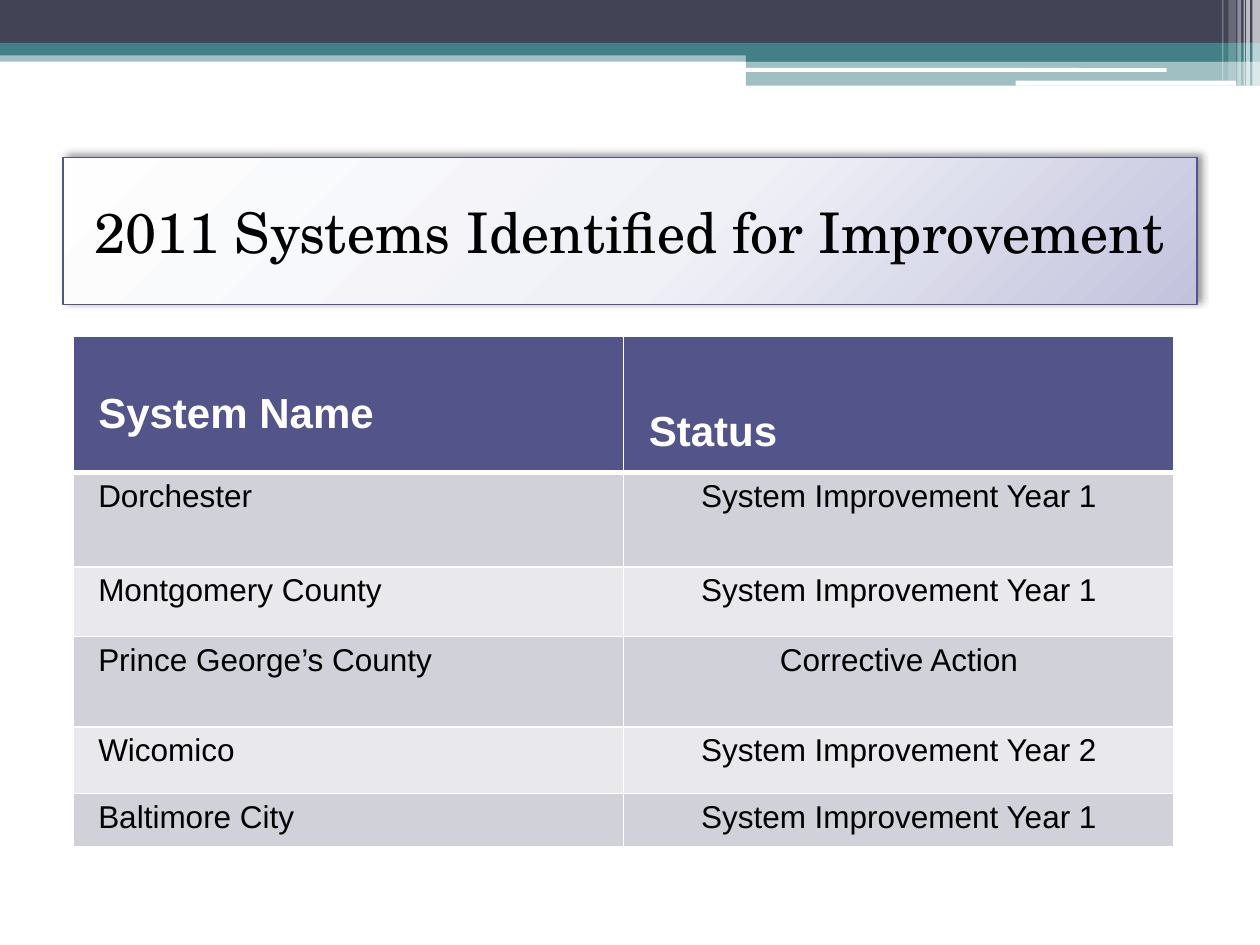
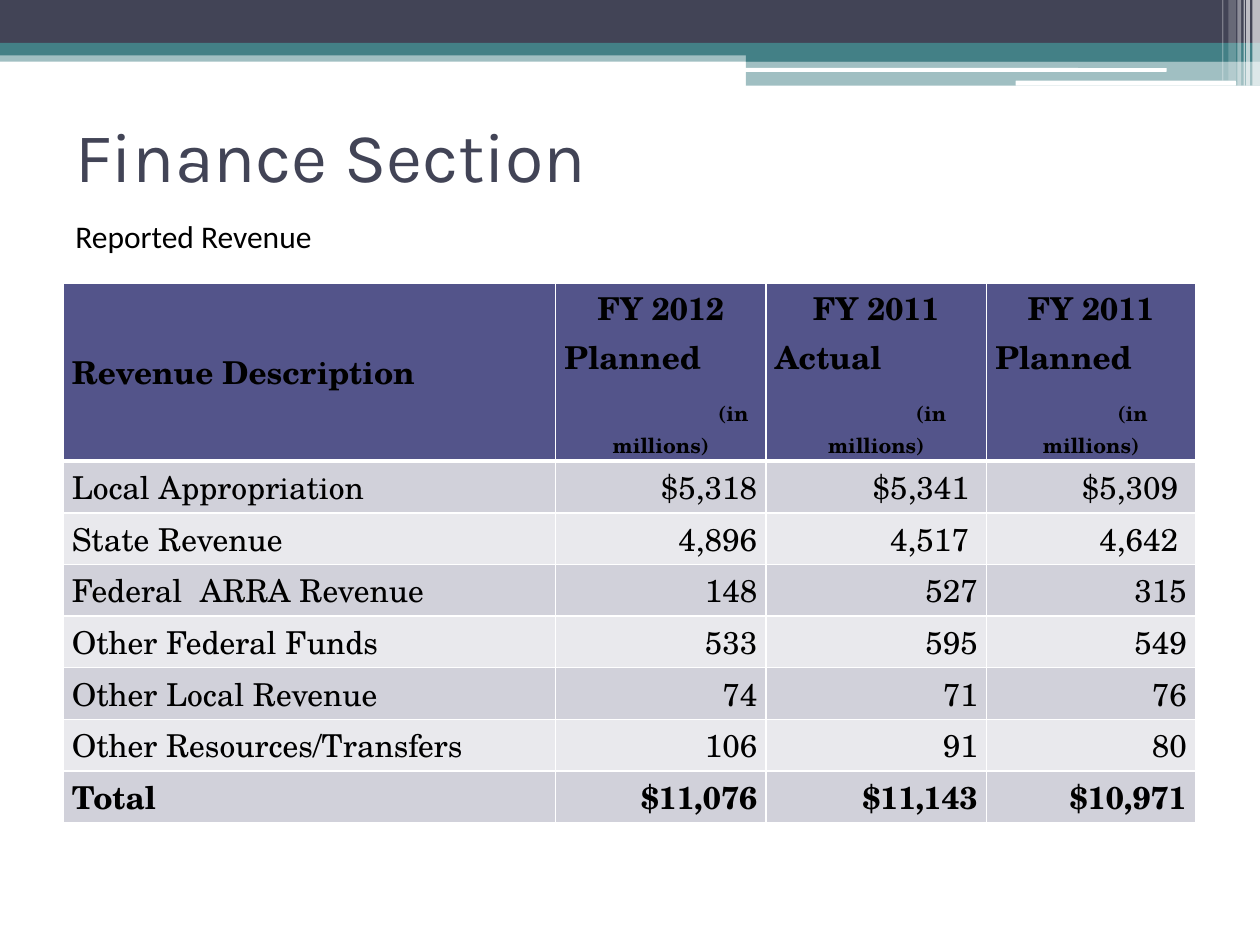
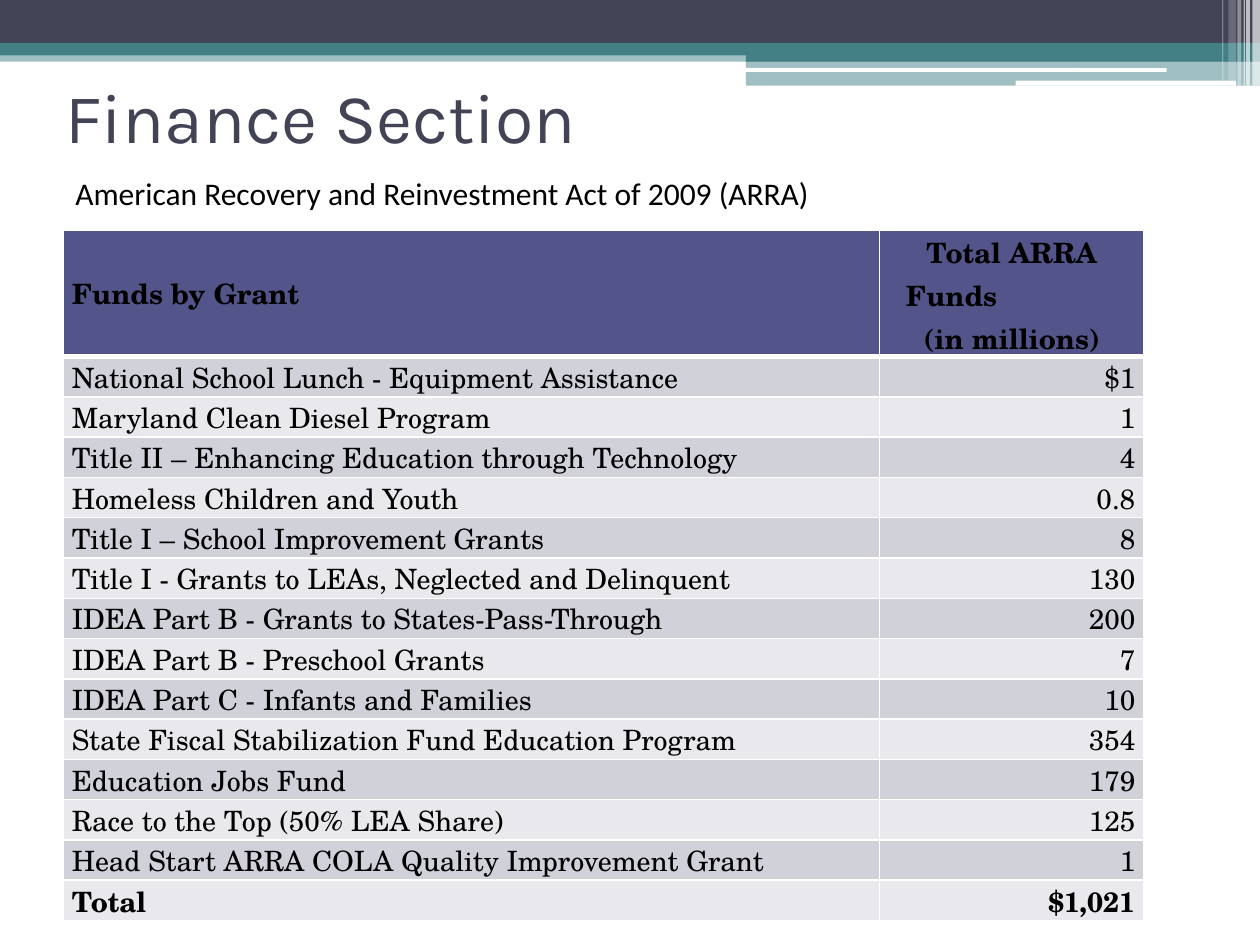
"""Build three slides on school system status and finance."""
from dataclasses import dataclass
from typing import NamedTuple

from lxml import etree
from pptx import Presentation
from pptx.dml.color import RGBColor
from pptx.enum.shapes import MSO_SHAPE
from pptx.enum.text import MSO_ANCHOR, PP_ALIGN
from pptx.oxml import parse_xml
from pptx.oxml.ns import nsdecls, qn
from pptx.util import Inches, Pt

RECT, ROUND = MSO_SHAPE.RECTANGLE, MSO_SHAPE.ROUNDED_RECTANGLE
LEFT, MID, RIGHT = PP_ALIGN.LEFT, PP_ALIGN.CENTER, PP_ALIGN.RIGHT
TOP, CENTER, LOW = MSO_ANCHOR.TOP, MSO_ANCHOR.MIDDLE, MSO_ANCHOR.BOTTOM


@dataclass(frozen=True)
class Theme:
    """Colours, fonts and type sizes of the deck."""
    white: str = "FFFFFF"
    black: str = "000000"
    slate: str = "424456"
    teal: str = "438086"
    indigo: str = "53548A"
    odd: str = "D1D1DA"
    even: str = "E9E9ED"
    sans: str = "Arial"
    serif: str = "TeX Gyre Schola"
    plain: str = "Calibri"
    head: str = "Karla"
    title: int = 40
    panel: int = 32
    label: int = 24
    body: int = 18
    dense: int = 16
    note: int = 12


THEME = Theme()


class Box(NamedTuple):
    """Place and size in inches."""
    left: float
    top: float
    width: float
    height: float


class Band(NamedTuple):
    """A filled bar of the page header."""
    box: Box
    color: str
    alpha: int = 100
    kind: int = RECT


class Font(NamedTuple):
    """Look of a run."""
    face: str
    size: int
    color: str = THEME.black
    bold: bool = False


class Line(NamedTuple):
    """One paragraph of a header cell."""
    text: str
    align: int = LEFT
    indent: float = 0
    size: int = 0
    before: int = 0


class Head(NamedTuple):
    """A header cell."""
    lines: tuple[Line, ...]
    anchor: int = CENTER
    top: float = 0


class Grid(NamedTuple):
    """A table with its heads, rows and look."""
    box: Box
    cols: tuple[float, ...]
    tall: tuple[float, ...]
    heads: tuple[Head, ...]
    rows: tuple[tuple[str, ...], ...]
    font: Font
    ink: str
    side: float
    pad: float
    align: int
    anchors: tuple[int, int]
    total: bool


def stripe(left: float, width: float, height: float, alpha: int) -> Band:
    """Return a pale upright bar at the top right."""
    return Band(Box(left, 0, width, height), THEME.white, alpha)


BANDS = (
    Band(Box(0, 0.4, 10, 0.09), THEME.teal, 50),
    Band(Box(0, 0, 10, 0.34), THEME.slate),
    Band(Box(0, 0.34, 10, 0.1), THEME.teal),
    Band(Box(5.92, 0.39, 4.08, 0.1), THEME.teal),
    Band(Box(5.92, 0.48, 4.08, 0.2), THEME.teal, 50),
    Band(Box(5.91, 0.54, 3.35, 0.03), THEME.white, 100, ROUND),
    Band(Box(8.06, 0.64, 1.75, 0.04), THEME.white, 100, ROUND),
    stripe(9.94, 0.06, 0.68, 65),
    stripe(9.89, 0.03, 0.68, 65),
    stripe(9.87, 0.01, 0.68, 60),
    stripe(9.82, 0.03, 0.68, 40),
    stripe(9.75, 0.06, 0.64, 20),
    stripe(9.7, 0.01, 0.64, 30),
)


def year(name: str, plan: str, indent: float) -> Head:
    """Return the head of a revenue column."""
    return Head((Line(name, MID), Line(plan),
                 Line("(in", LEFT, indent, THEME.note, 9),
                 Line("millions)", MID, 0, THEME.note)), LOW)


STATUS = Grid(
    Box(0.58, 2.67, 8.75, 4.05), (4.37, 4.37), (1.08, 0.75, 0.55, 0.72, 0.53, 0.42),
    (Head((Line("System Name", size=THEME.label),), TOP, 0.43),
     Head((Line("Status", size=THEME.label),), TOP, 0.57)),
    (("Dorchester", "System Improvement Year 1"),
     ("Montgomery County", "System Improvement Year 1"),
     ("Prince George’s County", "Corrective Action"),
     ("Wicomico", "System Improvement Year 2"),
     ("Baltimore City", "System Improvement Year 1")),
    Font(THEME.sans, THEME.body), THEME.white, 0.2, 0.05, MID, (TOP, TOP), False)

REVENUE = Grid(
    Box(0.5, 2.25, 9, 4.28), (3.91, 1.67, 1.75, 1.66), (1.41,) + (0.41,) * 7,
    (Head((Line("Revenue Description"),)),
     year("FY 2012", "Planned", 1.22),
     year("FY 2011", "Actual", 1.12),
     year("FY 2011", "Planned", 0.97)),
    (("Local Appropriation", "$5,318", "$5,341 ", "$5,309 "),
     ("State Revenue", "4,896", "4,517 ", "4,642 "),
     ("Federal  ARRA Revenue", "148", "527", "315"),
     ("Other Federal Funds", "533", "595", "549"),
     ("Other Local Revenue", "74", "71", "76"),
     ("Other Resources/Transfers", "106", "91", "80"),
     ("Total", "$11,076", "$11,143", "$10,971")),
    Font(THEME.serif, THEME.body), THEME.black, 0.07, 0, RIGHT, (CENTER, CENTER), True)

GRANTS = Grid(
    Box(0.5, 1.83, 8.58, 5.48), (6.48, 2.1), (1,) + (0.32,) * 14,
    (Head((Line("Funds by Grant"),)),
     Head((Line("Total ARRA", MID), Line("Funds", LEFT, 0.14),
           Line("(in millions)", MID)))),
    (("National School Lunch - Equipment Assistance", "$1"),
     ("Maryland Clean Diesel Program", "1"),
     ("Title II – Enhancing Education through Technology", "4"),
     ("Homeless Children and Youth", "0.8"),
     ("Title I – School Improvement Grants", "8"),
     ("Title I - Grants to LEAs, Neglected and Delinquent", "130"),
     ("IDEA Part B - Grants to States-Pass-Through", "200"),
     ("IDEA Part B - Preschool Grants", "7"),
     ("IDEA Part C - Infants and Families", "10"),
     ("State Fiscal Stabilization Fund Education Program", "354"),
     ("Education Jobs Fund", "179"),
     ("Race to the Top (50% LEA Share)", "125"),
     ("Head Start ARRA COLA Quality Improvement Grant", "1"),
     ("Total", "$1,021")),
    Font(THEME.serif, THEME.dense), THEME.black, 0.07, 0, RIGHT, (CENTER, LOW), True)


def place(box: Box) -> tuple:
    """Return a box as lengths."""
    return tuple(Inches(part) for part in box)


def add_run(para, text: str, font: Font) -> None:
    """Add one styled run to a paragraph."""
    run = para.add_run()
    run.text = text
    run.font.name = font.face
    run.font.size = Pt(font.size)
    run.font.bold = font.bold
    run.font.color.rgb = RGBColor.from_string(font.color)


def add_band(slide, band: Band) -> None:
    """Draw one bar of the page header."""
    shape = slide.shapes.add_shape(band.kind, *place(band.box))
    shape.shadow.inherit = False
    shape.line.fill.background()
    shape.fill.solid()
    shape.fill.fore_color.rgb = RGBColor.from_string(band.color)
    if band.alpha < 100:
        color = shape.fill._xPr.find(qn("a:solidFill"))[0]
        etree.SubElement(color, qn("a:alpha"), val=str(band.alpha * 1000))


def add_text(slide, box: Box, text: str, font: Font, anchor: int = TOP) -> None:
    """Add a text box with one line."""
    frame = slide.shapes.add_textbox(*place(box)).text_frame
    frame.word_wrap = True
    frame.vertical_anchor = anchor
    add_run(frame.paragraphs[0], text, font)


def add_panel(slide, box: Box, text: str) -> None:
    """Add a title on a shaded panel with a shadow."""
    shape = slide.shapes.add_shape(RECT, *place(box))
    shape.line.color.rgb = RGBColor.from_string(THEME.indigo)
    shape.line.width = Pt(0.75)
    stops = "".join(
        f'<a:gs pos="{spot * 1000}"><a:srgbClr val="{color}"/></a:gs>'
        for spot, color in ((0, "FEFEFE"), (55, "F0F1F7"), (100, "C2C2DD")))
    shade = parse_xml(
        f'<a:gradFill {nsdecls("a")} rotWithShape="1"><a:gsLst>{stops}</a:gsLst>'
        '<a:path path="circle"><a:fillToRect l="-40000" t="-90000" '
        'r="140000" b="190000"/></a:path></a:gradFill>')
    props = shape._element.spPr
    props.find(qn("a:prstGeom")).addnext(shade)
    props.append(parse_xml(
        f'<a:effectLst {nsdecls("a")}><a:outerShdw blurRad="{Pt(4)}" '
        f'dist="{Pt(3)}" dir="{315 * 60000}" algn="bl" rotWithShape="0">'
        f'<a:srgbClr val="{THEME.black}"><a:alpha val="40000"/></a:srgbClr>'
        '</a:outerShdw></a:effectLst>'))
    frame = shape.text_frame
    frame.word_wrap = True
    frame.vertical_anchor = CENTER
    para = frame.paragraphs[0]
    para.alignment = MID
    add_run(para, text, Font(THEME.serif, THEME.panel))


def set_cell(cell, grid: Grid, head: Head, font: Font, fill: str,
             above: int, below: int) -> None:
    """Fill, border and write one cell."""
    props = cell._tc.get_or_add_tcPr()
    for side, width in (("L", 1), ("R", 1), ("T", above), ("B", below)):
        props.append(parse_xml(
            f'<a:ln{side} {nsdecls("a")} w="{Pt(width)}"><a:solidFill>'
            f'<a:srgbClr val="{THEME.white}"/></a:solidFill></a:ln{side}>'))
    cell.fill.solid()
    cell.fill.fore_color.rgb = RGBColor.from_string(fill)
    cell.margin_left = cell.margin_right = Inches(grid.side)
    cell.margin_top = Inches(head.top or grid.pad)
    cell.margin_bottom = Inches(grid.pad)
    cell.vertical_anchor = head.anchor
    frame = cell.text_frame
    for spot, line in enumerate(head.lines):
        para = frame.add_paragraph() if spot else frame.paragraphs[0]
        para.alignment = line.align
        if line.indent:
            para._p.get_or_add_pPr().set("marL", str(Inches(line.indent)))
        if line.before:
            para.space_before = Pt(line.before)
        add_run(para, line.text, font._replace(size=line.size or font.size))


def add_grid(slide, grid: Grid) -> None:
    """Add a table with a header row and banded rows."""
    count = len(grid.rows)
    table = slide.shapes.add_table(count + 1, len(grid.cols), *place(grid.box)).table
    table.first_row = table.horz_banding = False
    for col, width in zip(table.columns, grid.cols):
        col.width = Inches(width)
    for row, height in zip(table.rows, grid.tall):
        row.height = Inches(height)
    for col, head in enumerate(grid.heads):
        bold = grid.font._replace(color=grid.ink, bold=True)
        set_cell(table.cell(0, col), grid, head, bold, THEME.indigo, 1, 3)
    for row, texts in enumerate(grid.rows, 1):
        font = grid.font._replace(bold=grid.total and row == count)
        fill = THEME.odd if row % 2 else THEME.even
        for col, text in enumerate(texts):
            line = Line(text, grid.align if col else LEFT)
            head = Head((line,), grid.anchors[min(col, 1)])
            set_cell(table.cell(row, col), grid, head, font, fill,
                     3 if row == 1 else 1, 1)


def add_page(deck):
    """Add a blank slide with the header bands."""
    slide = deck.slides.add_slide(deck.slide_layouts[6])
    for band in BANDS:
        add_band(slide, band)
    return slide


def add_fund(deck, title: Box, sub: Box, text: str, grid: Grid) -> None:
    """Add a finance slide with a title, a subtitle and a table."""
    slide = add_page(deck)
    add_text(slide, title, "Finance Section",
             Font(THEME.head, THEME.title, THEME.slate), CENTER)
    add_grid(slide, grid)
    add_text(slide, sub, text, Font(THEME.plain, THEME.body))


def main() -> None:
    """Build and save the deck."""
    deck = Presentation()
    deck.slide_width, deck.slide_height = Inches(10), Inches(7.5)
    slide = add_page(deck)
    add_panel(slide, Box(0.5, 1.25, 9, 1.17), "2011 Systems Identified for Improvement")
    add_grid(slide, STATUS)
    add_fund(deck, Box(0.5, 0.77, 9, 0.92), Box(0.5, 1.67, 7.67, 0.4),
             "Reported Revenue", REVENUE)
    add_fund(deck, Box(0.42, 0.42, 9, 1), Box(0.5, 1.33, 7, 0.4),
             "American Recovery and Reinvestment Act of 2009 (ARRA)", GRANTS)
    deck.save("out.pptx")


if __name__ == "__main__":
    main()
